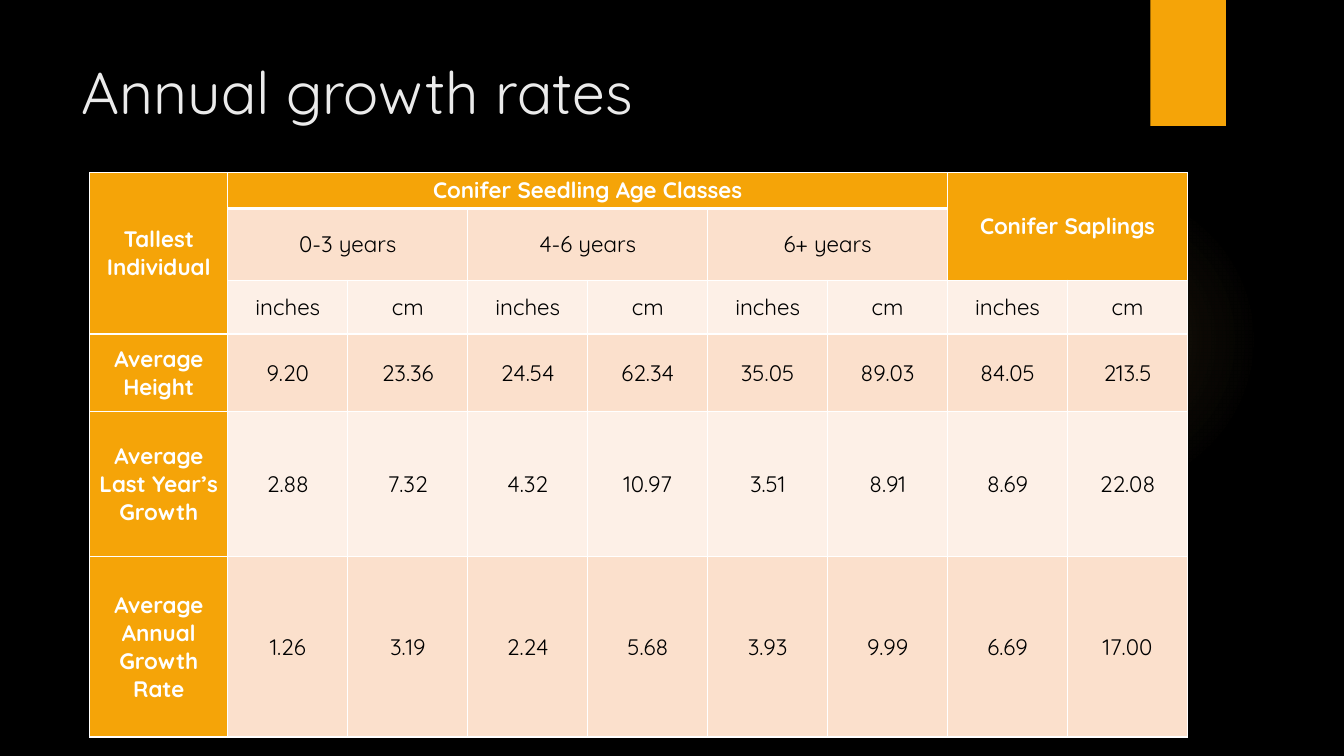
from lxml import etree
from pptx import Presentation
from pptx import util as u
from pptx.dml.color import RGBColor
from pptx.enum import shapes, text
from pptx.oxml import parse_xml
from pptx.oxml.ns import nsdecls, qn

FONT = "Quicksand"
ORANGE, PEACH, CREAM = "F5A408", "FBE0CC", "FDF0E7"
WHITE, BLACK = "FFFFFF", "000000"
COLUMNS = [1.37] + [1.19] * 8
HEIGHTS = [0.36, 0.71, 0.46, 0.77, 1.44, 1.79]
ROWS = [
    ["Tallest Individual", "Conifer Seedling Age Classes", "", "", "", "", "", "Conifer Saplings", ""],
    ["", "0-3 years", "", "4-6 years", "", "6+ years", "", "", ""],
    [""] + ["inches", "cm"] * 4,
    ["Average Height", "9.20", "23.36", "24.54", "62.34", "35.05", "89.03", "84.05", "213.5"],
    ["Average Last Year’s Growth", "2.88", "7.32", "4.32", "10.97", "3.51", "8.91", "8.69", "22.08"],
    ["Average Annual Growth Rate", "1.26", "3.19", "2.24", "5.68", "3.93", "9.99", "6.69", "17.00"],
]
MERGES = [(0, 0, 2, 0), (0, 1, 0, 6), (0, 7, 1, 8), (1, 1, 1, 2), (1, 3, 1, 4), (1, 5, 1, 6)]


def color(value):
    """Turn a hex string into a colour."""
    return RGBColor.from_string(value)


def set_format(target, values):
    """Set each attribute named in a dict."""
    for name, value in values.items():
        setattr(target, name, value)


def style_text(para, size, value, bold=False):
    """Format the text of a paragraph."""
    set_format(para.font, {"name": FONT, "size": u.Pt(size), "bold": bold})
    para.font.color.rgb = color(value)


def add_plain(page, kind, box, fill):
    """Add a filled shape without line or shadow."""
    shape = page.shapes.add_shape(kind, *map(u.Inches, box))
    shape.shadow.inherit = False
    shape.fill.solid()
    shape.fill.fore_color.rgb = color(fill)
    shape.line.fill.background()
    return shape


def add_glow(page, box):
    """Add a faint round glow that fades outwards."""
    glow = add_plain(page, shapes.MSO_SHAPE.OVAL, box, "FAC96A")
    stops = "".join(
        f'<a:gs pos="{place * 1000}"><a:srgbClr val="FAC96A"><a:alpha val="{alpha * 1000}"/></a:srgbClr></a:gs>'
        for place, alpha in [(0, 7), (36, 6), (69, 0), (100, 0)]
    )
    gradient = parse_xml(
        f'<a:gradFill {nsdecls("a")}><a:gsLst>{stops}</a:gsLst><a:path path="circle">'
        '<a:fillToRect l="50000" t="50000" r="50000" b="50000"/></a:path></a:gradFill>'
    )
    properties = glow.element.spPr
    properties.replace(properties.find(qn("a:solidFill")), gradient)


def add_title(page, box, words):
    """Add the slide title."""
    frame = page.shapes.add_textbox(*map(u.Inches, box)).text_frame
    set_format(frame, {"word_wrap": True, "vertical_anchor": text.MSO_ANCHOR.TOP})
    para = frame.paragraphs[0]
    para.text = words
    style_text(para, 42, "EBEBEB")


def add_borders(cell, thick_bottom):
    """Draw white lines on all sides of a cell."""
    properties = cell._tc.get_or_add_tcPr()
    for side in "LRTB":
        points = 3 if side == "B" and thick_bottom else 1
        line = etree.SubElement(properties, qn(f"a:ln{side}"), w=str(u.Pt(points)))
        fill = etree.SubElement(line, qn("a:solidFill"))
        etree.SubElement(fill, qn("a:srgbClr"), val=WHITE)


def fill_cell(cell, words, row, column):
    """Write and format one cell according to its place."""
    heading = column == 0 or row == 0 or (row == 1 and column > 6)
    thick_bottom = (row == 0 and 0 < column < 7) or (row == 1 and column > 6) or (row == 2 and column == 0)
    add_borders(cell, thick_bottom)
    cell.fill.solid()
    cell.fill.fore_color.rgb = color(ORANGE if heading else PEACH if row % 2 else CREAM)
    side = u.Inches(0.07)
    set_format(cell, {"margin_left": side, "margin_right": side, "margin_top": 0, "margin_bottom": 0,
                      "vertical_anchor": text.MSO_ANCHOR.MIDDLE})
    para = cell.text_frame.paragraphs[0]
    para.text = words
    para.alignment = text.PP_ALIGN.CENTER
    style_text(para, 16, WHITE if heading else BLACK, heading)


def add_growth_table(page, box):
    """Add the table of growth rates."""
    table = page.shapes.add_table(len(ROWS), len(COLUMNS), *map(u.Inches, box)).table
    set_format(table, {"first_row": False, "horz_banding": False})
    for column, width in zip(table.columns, COLUMNS):
        column.width = u.Inches(width)
    for row, height in zip(table.rows, HEIGHTS):
        row.height = u.Inches(height)
    for row, entries in enumerate(ROWS):
        for column, words in enumerate(entries):
            fill_cell(table.cell(row, column), words, row, column)
    for top, left, bottom, right in MERGES:
        table.cell(top, left).merge(table.cell(bottom, right))


def build_growth_slide(deck):
    """Build the slide on annual growth rates."""
    page = deck.slides.add_slide(deck.slide_layouts[6])
    page.background.fill.solid()
    page.background.fill.fore_color.rgb = color(BLACK)
    add_glow(page, (9.41, 1.83, 3.08, 3.08))
    add_plain(page, shapes.MSO_SHAPE.RECTANGLE, (11.41, 0, 0.75, 1.25), ORANGE)
    add_title(page, (0.71, 0.5, 10.29, 1.53), "Annual growth rates")
    add_growth_table(page, (0.89, 1.71, sum(COLUMNS), sum(HEIGHTS)))


def main():
    """Create and save the deck."""
    deck = Presentation()
    set_format(deck, {"slide_width": u.Inches(13.33), "slide_height": u.Inches(7.5)})
    build_growth_slide(deck)
    deck.save("out.pptx")


if __name__ == "__main__":
    main()
